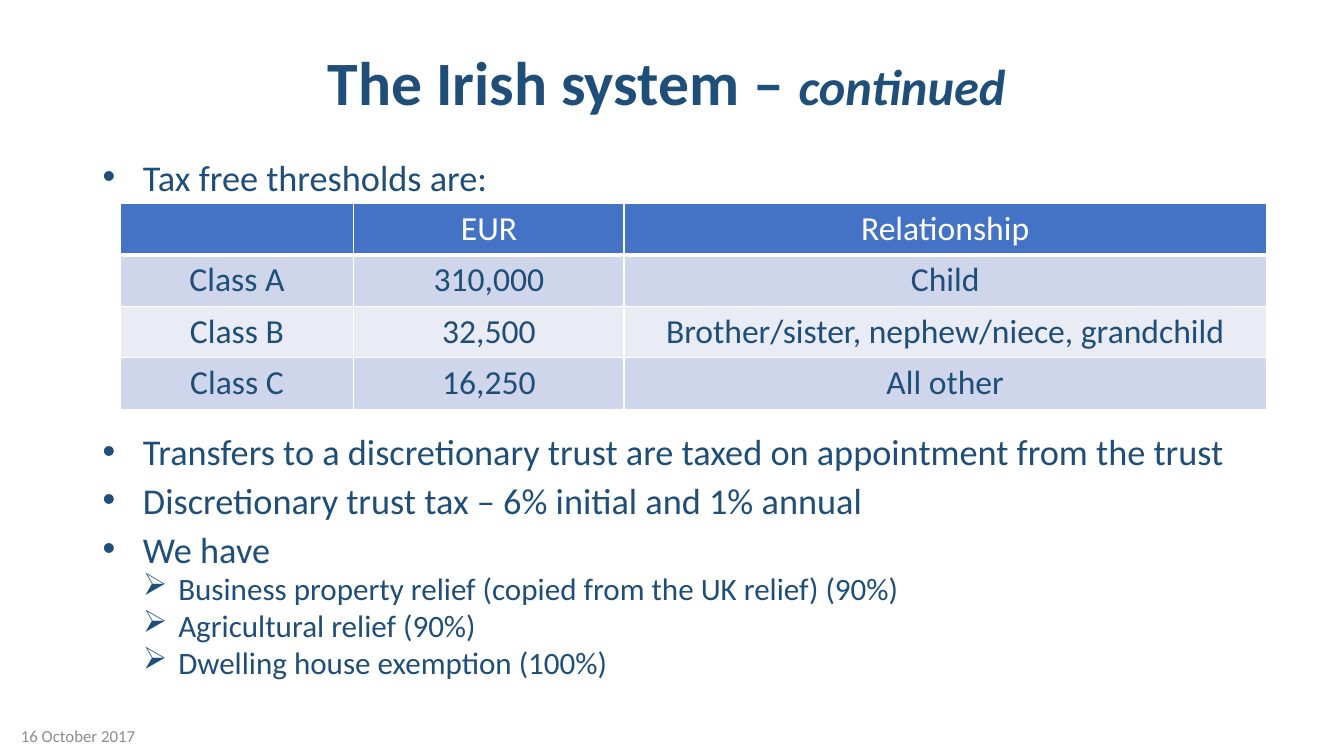
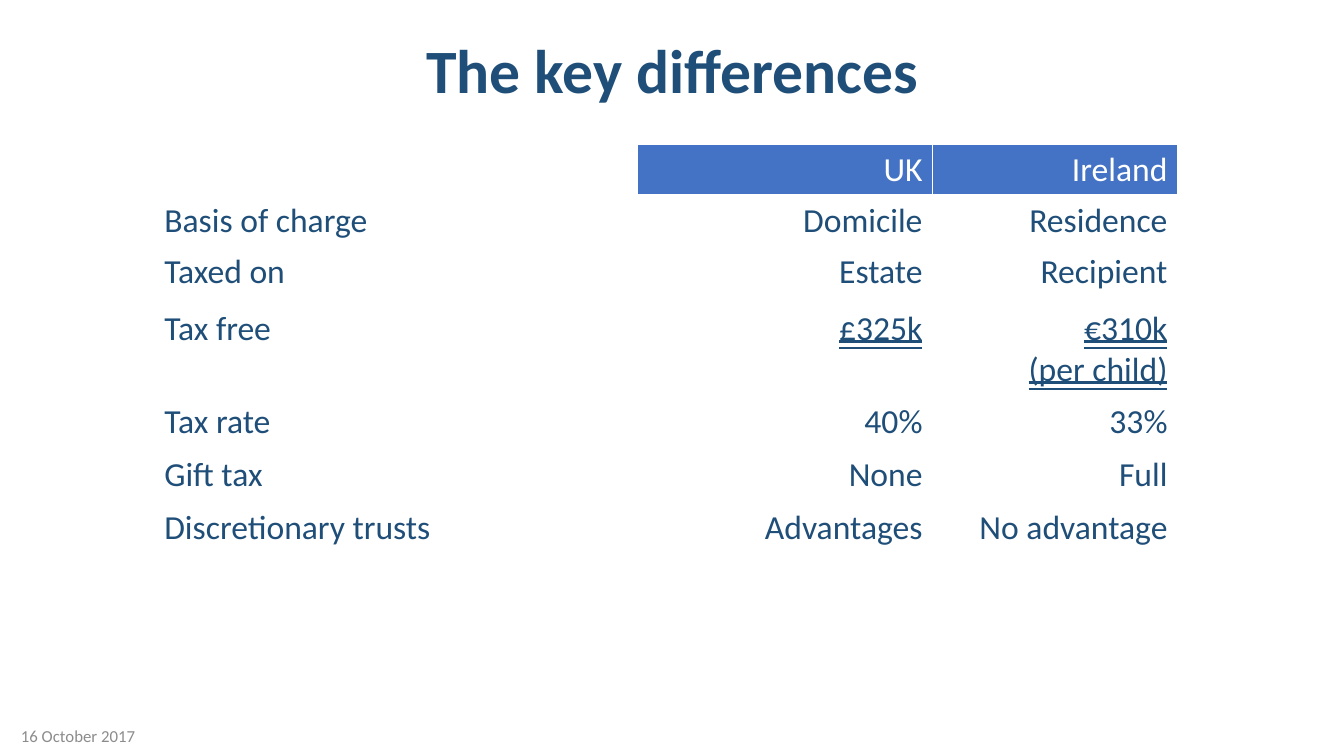
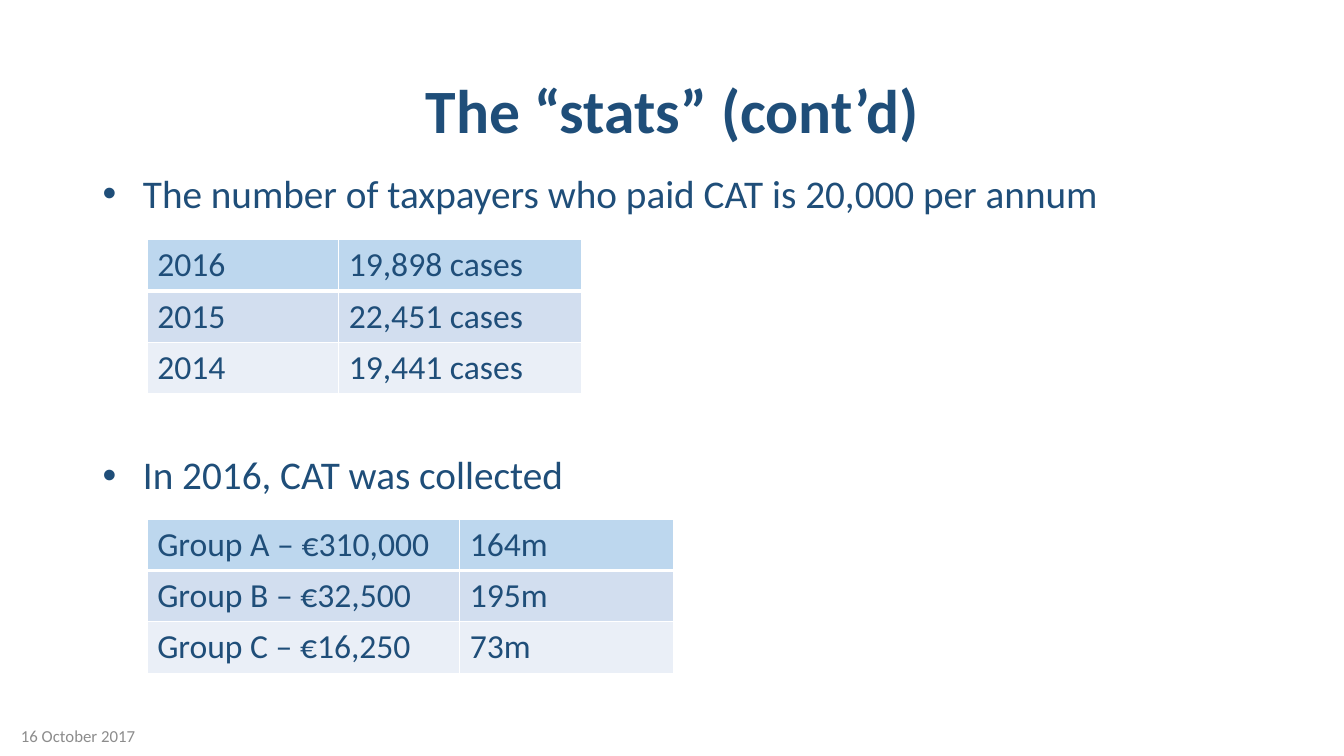
"""Builds three slides on Irish inheritance tax: thresholds, differences and statistics."""
from lxml import etree
from pptx import Presentation
from pptx.dml.color import RGBColor
from pptx.enum.text import MSO_ANCHOR, MSO_UNDERLINE, PP_ALIGN
from pptx.oxml.ns import qn
from pptx.util import Inches, Pt

LEFT, CENTER, RIGHT = PP_ALIGN.LEFT, PP_ALIGN.CENTER, PP_ALIGN.RIGHT
MIDDLE = MSO_ANCHOR.MIDDLE
DOUBLE = MSO_UNDERLINE.DOUBLE_LINE

FONT = "Calibri"
NAVY, BLUE, GREY, WHITE = "1F4E79", "4472C4", "8C8C8C", "FFFFFF"
LILAC_BANDS = [BLUE, "CFD5EA", "E9EBF5", "CFD5EA"]
SKY_BANDS = ["BDD7EE", "D2DEEF", "EAEFF7"]
MARGIN, CONTENT_WIDTH, TITLE_HEIGHT = 0.92, 11.5, 1.45
ROW_HEIGHT = 0.51
TABLE_GAP = 171
DATE = "16 October 2017"

BULLET_LEVELS = [
    {"char": "•", "font": "Arial", "left": 0.4, "hang": 0.4, "before": 10},
    {"char": "➢", "font": None, "left": 0.75, "hang": 0.35, "before": 5},
]

SLIDES = [
    {
        "title": [("The Irish system – ", 44, False), ("continued ", 36, True)],
        "title_top": 0.12,
        "body": {
            "top": 1.57, "height": 5.31, "sizes": [25.9, 22.2], "spacing": 0.8,
            "items": [
                (0, "Tax free thresholds are:", None),
                (0, "Transfers to a discretionary trust are taxed on appointment from the trust",
                 TABLE_GAP),
                (0, "Discretionary trust tax – 6% initial and 1% annual", None),
                (0, "We have", None),
                (1, "Business property relief (copied from the UK relief) (90%)", None),
                (1, "Agricultural relief (90%)", None),
                (1, "Dwelling house exemption (100%)", None),
            ],
        },
        "tables": [{
            "at": (1.19, 2.02), "columns": [2.32, 2.68, 6.37],
            "aligns": [CENTER] * 3, "fills": LILAC_BANDS,
            "rows": [
                ["", "EUR", "Relationship"],
                ["Class A", "310,000", "Child"],
                ["Class B", "32,500", "Brother/sister, nephew/niece, grandchild"],
                ["Class C", "16,250", "All other"],
            ],
        }],
    },
    {
        "title": [("The key differences", 44, False)],
        "title_top": 0,
        "tables": [{
            "at": (1.53, 1.43), "columns": [4.79, 2.93, 2.43],
            "heights": [0.51, 0.51, 0.56, 0.92, 0.53, 0.53, 0.53],
            "aligns": [LEFT, RIGHT, RIGHT], "fills": [BLUE] + [None] * 6,
            "underlined": {(3, 1), (3, 2)},
            "rows": [
                ["", "UK", "Ireland"],
                ["Basis of charge", "Domicile", "Residence"],
                ["Taxed on", "Estate", "Recipient"],
                ["Tax free", "£325k", "€310k\n(per child)"],
                ["Tax rate", "40%", "33%"],
                ["Gift tax", "None", "Full"],
                ["Discretionary trusts", "Advantages", "No advantage"],
            ],
            "unfilled": (0, 0),
        }],
    },
    {
        "title": [("The “stats” (cont’d)", 44, False)],
        "title_top": 0.4,
        "body": {
            "top": 1.68, "height": 5.08, "sizes": [28], "spacing": 0.9,
            "items": [
                (0, "The number of taxpayers who paid CAT is 20,000 per annum", None),
                (0, "In 2016, CAT was collected", TABLE_GAP),
            ],
        },
        "tables": [
            {
                "at": (1.46, 2.38), "columns": [1.9, 2.41],
                "aligns": [LEFT] * 2, "fills": SKY_BANDS,
                "rows": [["2016", "19,898 cases"], ["2015", "22,451 cases"],
                         ["2014", "19,441 cases"]],
            },
            {
                "at": (1.46, 5.15), "columns": [3.1, 2.12],
                "aligns": [LEFT] * 2, "fills": SKY_BANDS,
                "rows": [["Group A – €310,000", "164m"], ["Group B – €32,500", "195m"],
                         ["Group C – €16,250", "73m"]],
            },
        ],
    },
]


def rgb(value):
    return RGBColor.from_string(value)


def style(font, size, color, bold=False, italic=False):
    font.name, font.size, font.bold, font.italic = FONT, Pt(size), bold, italic
    font.color.rgb = rgb(color)


def add_text_frame(slide, left, top, width, height):
    box = slide.shapes.add_textbox(*map(Inches, (left, top, width, height)))
    box.text_frame.word_wrap = True
    return box.text_frame


def add_title(slide, parts, top):
    frame = add_text_frame(slide, MARGIN, top, CONTENT_WIDTH, TITLE_HEIGHT)
    frame.vertical_anchor = MIDDLE
    paragraph = frame.paragraphs[0]
    paragraph.alignment, paragraph.line_spacing = CENTER, 0.9
    for text, size, italic in parts:
        run = paragraph.add_run()
        run.text = text
        style(run.font, size, NAVY, bold=True, italic=italic)


def add_date(slide):
    frame = add_text_frame(slide, 0.11, 7.1, 3, 0.4)
    frame.vertical_anchor = MIDDLE
    frame.text = DATE
    style(frame.paragraphs[0].runs[0].font, 12, GREY)


def add_bullet(paragraph, level):
    properties = paragraph._p.get_or_add_pPr()
    properties.set("marL", str(Inches(level["left"])))
    properties.set("indent", str(-Inches(level["hang"])))
    if level["font"]:
        etree.SubElement(properties, qn("a:buFont"), typeface=level["font"])
    etree.SubElement(properties, qn("a:buChar"), char=level["char"])


def add_body(slide, body):
    frame = add_text_frame(slide, MARGIN, body["top"], CONTENT_WIDTH, body["height"])
    frame.text = "\n".join(text for _, text, _ in body["items"])
    for index, (depth, _, gap) in enumerate(body["items"]):
        paragraph, level = frame.paragraphs[index], BULLET_LEVELS[depth]
        paragraph.level = depth
        add_bullet(paragraph, level)
        paragraph.line_spacing = body["spacing"]
        if index:
            paragraph.space_before = Pt(gap or level["before"])
        style(paragraph.runs[0].font, body["sizes"][depth], NAVY)


def add_borders(cell, bottom):
    properties = cell._tc.get_or_add_tcPr()
    for index, (side, width) in enumerate([("L", 1), ("R", 1), ("T", 1), ("B", bottom)]):
        line = etree.Element(qn(f"a:ln{side}"), w=str(Pt(width)))
        fill = etree.SubElement(line, qn("a:solidFill"))
        etree.SubElement(fill, qn("a:srgbClr"), val=WHITE)
        properties.insert(index, line)


def fill_cell(cell, text, fill, align, underline):
    cell.text_frame.text = text
    for paragraph in cell.text_frame.paragraphs:
        paragraph.alignment = align
        for run in paragraph.runs:
            style(run.font, 24, WHITE if fill == BLUE else NAVY)
            if underline:
                run.font.underline = DOUBLE
    if fill:
        cell.fill.solid()
        cell.fill.fore_color.rgb = rgb(fill)
    else:
        cell.fill.background()


def add_table(slide, data):
    rows, columns = data["rows"], data["columns"]
    heights = data.get("heights", [ROW_HEIGHT] * len(rows))
    frame = slide.shapes.add_table(len(rows), len(columns), *map(
        Inches, (*data["at"], sum(columns), sum(heights))))
    table = frame.table
    table.first_row = table.horz_banding = False
    for column, width in zip(table.columns, columns):
        column.width = Inches(width)
    for r, texts in enumerate(rows):
        table.rows[r].height = Inches(heights[r])
        for c, text in enumerate(texts):
            cell = table.cell(r, c)
            fill = None if (r, c) == data.get("unfilled") else data["fills"][r]
            fill_cell(cell, text, fill, data["aligns"][c], (r, c) in data.get("underlined", ()))
            add_borders(cell, 1 if r else 3)


def main():
    presentation = Presentation()
    presentation.slide_width, presentation.slide_height = Inches(13.33), Inches(7.5)
    for content in SLIDES:
        slide = presentation.slides.add_slide(presentation.slide_layouts[6])
        add_title(slide, content["title"], content["title_top"])
        if "body" in content:
            add_body(slide, content["body"])
        for data in content["tables"]:
            add_table(slide, data)
        add_date(slide)
    presentation.save("out.pptx")


if __name__ == "__main__":
    main()
